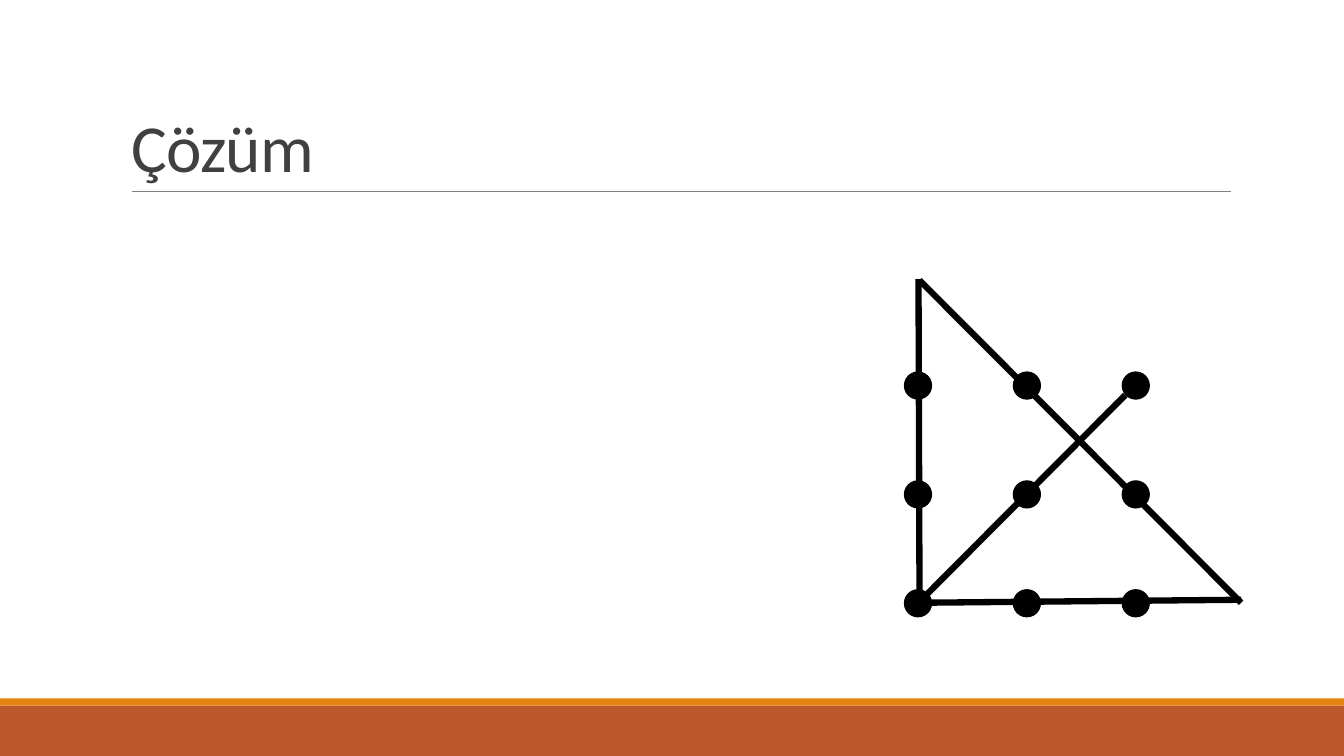
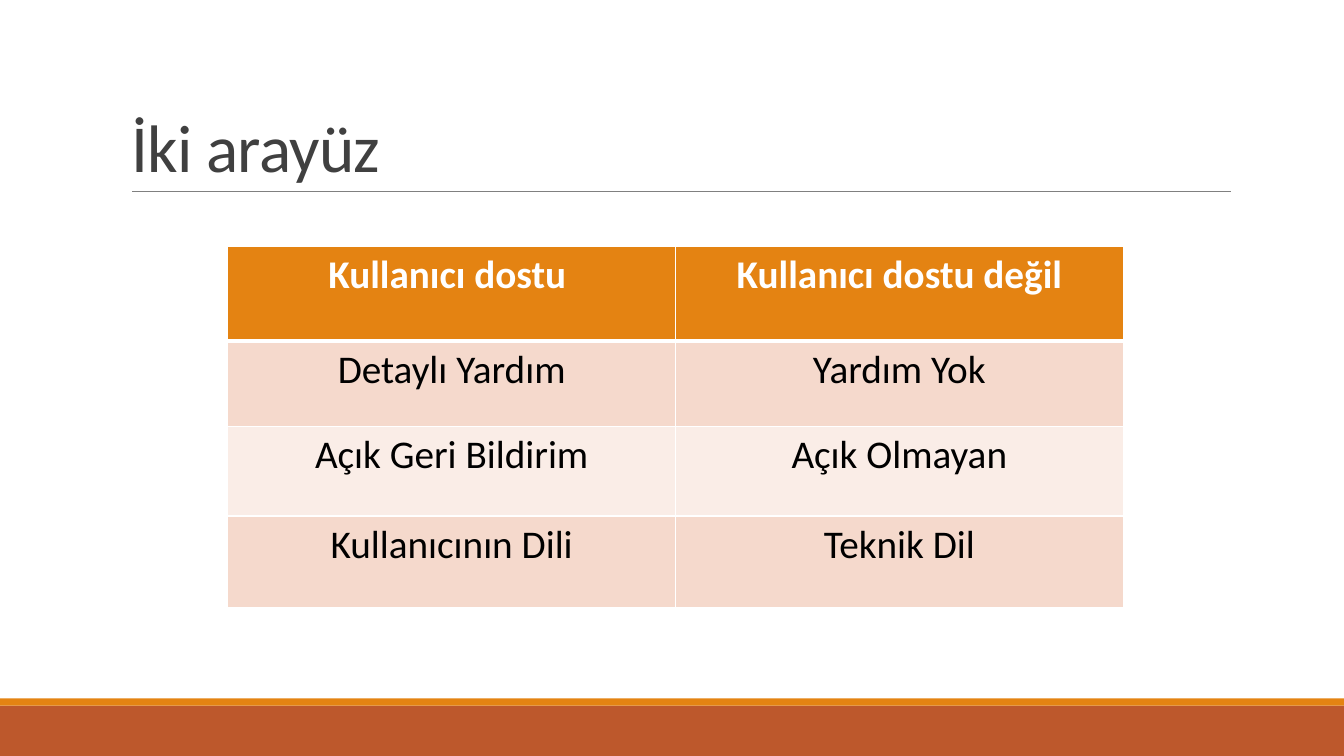
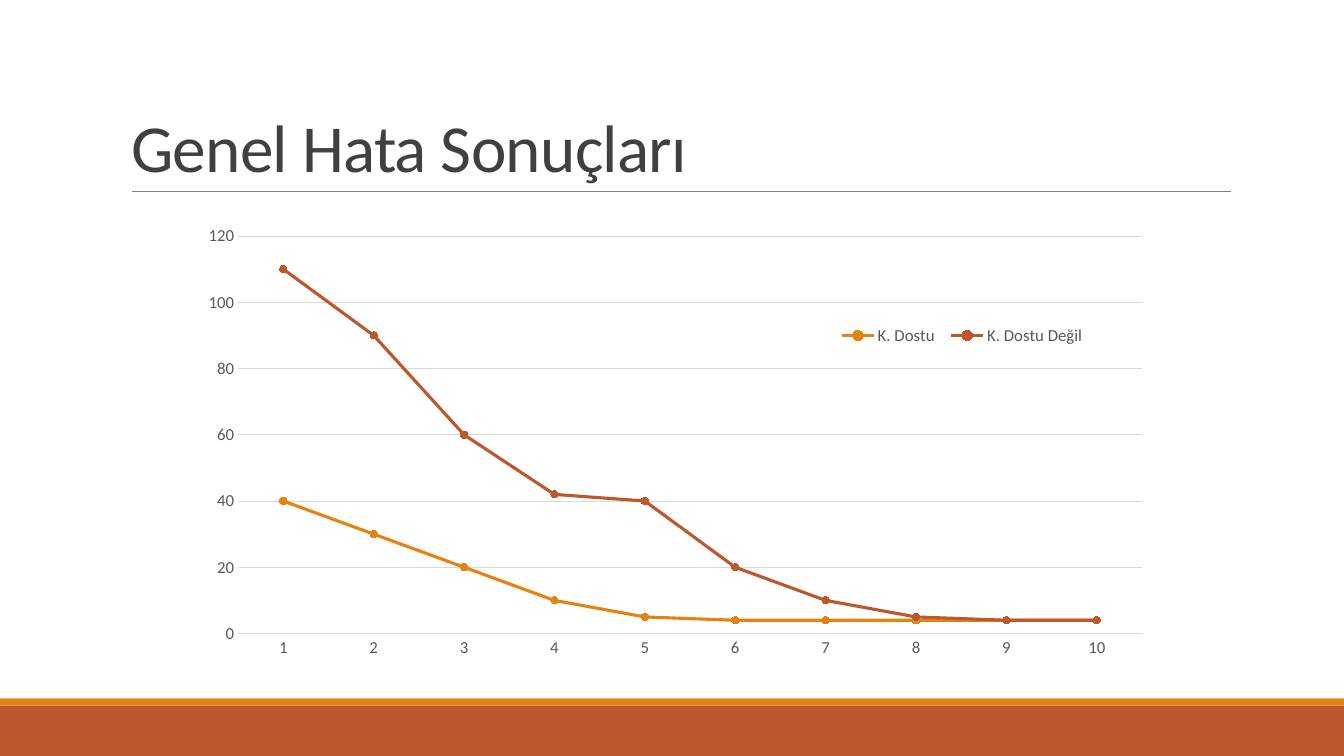
import pptx
import pptx.chart.data
import pptx.dml.color
import pptx.enum.chart
import pptx.enum.shapes
import pptx.enum.text
import pptx.oxml
import pptx.oxml.ns
import pptx.util

Inches = pptx.util.Inches
Pt = pptx.util.Pt
RGBColor = pptx.dml.color.RGBColor
Shape = pptx.enum.shapes.MSO_SHAPE

WHITE = RGBColor(0xFF, 0xFF, 0xFF)
BLACK = RGBColor(0x00, 0x00, 0x00)
ORANGE = RGBColor(0xE4, 0x83, 0x12)
RUST = RGBColor(0xBD, 0x58, 0x2C)
TITLE_GREY = RGBColor(0x40, 0x40, 0x40)
RULE_GREY = RGBColor(0x80, 0x80, 0x80)
LABEL_GREY = RGBColor(0x59, 0x59, 0x59)
GRID_GREY = RGBColor(0xD9, 0xD9, 0xD9)
DARK_ROW = RGBColor(0xF5, 0xD9, 0xCC)
LIGHT_ROW = RGBColor(0xFA, 0xED, 0xE7)


class Deck:
    font = "Calibri"

    def __init__(self):
        self.presentation = pptx.Presentation()
        self.presentation.slide_width = Inches(13.33)
        self.presentation.slide_height = Inches(7.5)
        self.slide = None

    def add_slide(self, title):
        layout = self.presentation.slide_layouts[5]
        self.slide = self.presentation.slides.add_slide(layout)
        shapes = self.slide.shapes
        self.shape(shapes, Shape.RECTANGLE, 0, 7, 13.33, 0.5, RUST)
        self.shape(shapes, Shape.RECTANGLE, 0, 6.93, 13.33, 0.07, ORANGE)
        self.line(shapes, (1.31, 1.9), (12.21, 1.9), RULE_GREY, 0.5)
        self.title(title)

    def title(self, text):
        shape = self.slide.shapes.title
        shape.left, shape.top = Inches(1.2), Inches(0.31)
        shape.width, shape.height = Inches(11), Inches(1.59)
        frame = shape.text_frame
        frame.auto_size = pptx.enum.text.MSO_AUTO_SIZE.NONE
        frame.vertical_anchor = pptx.enum.text.MSO_ANCHOR.BOTTOM
        paragraph = frame.paragraphs[0]
        paragraph.alignment = pptx.enum.text.PP_ALIGN.LEFT
        paragraph.line_spacing = 0.85
        run = self.run(paragraph, text, 48, TITLE_GREY)
        run.font._element.set("spc", "-50")

    def run(self, paragraph, text, size, color, bold=False):
        run = paragraph.add_run()
        run.text = text
        self.style_font(run.font, size, color)
        run.font.bold = bold
        return run

    def style_font(self, font, size, color):
        font.name = self.font
        font.size = Pt(size)
        font.color.rgb = color

    def shape(self, shapes, kind, left, top, width, height, color):
        shape = shapes.add_shape(
            kind, Inches(left), Inches(top), Inches(width), Inches(height))
        shape.shadow.inherit = False
        shape.fill.solid()
        shape.fill.fore_color.rgb = color
        shape.line.fill.background()
        return shape

    def line(self, shapes, start, end, color, width):
        connector = shapes.add_connector(
            pptx.enum.shapes.MSO_CONNECTOR.STRAIGHT,
            *(Inches(value) for value in (*start, *end)))
        connector.line.color.rgb = color
        connector.line.width = Pt(width)
        connector._element.spPr.append(
            pptx.oxml.ns.qn("a:effectLst") and pptx.oxml.parse_xml(
                f"<a:effectLst {pptx.oxml.ns.nsdecls('a')}/>"))

    def dot_puzzle(self, left, top, pitch, diameter, strokes):
        shapes = self.slide.shapes.add_group_shape().shapes
        for row in range(3):
            for column in range(3):
                dot = self.shape(
                    shapes, Shape.OVAL, left + column * pitch,
                    top + row * pitch, diameter, diameter, BLACK)
                dot.line.color.rgb = BLACK
                dot.line.width = Pt(0.75)
        for start, end in strokes:
            self.line(shapes, start, end, BLACK, 4.5)

    def table(self, left, top, width, row_heights, rows):
        table = self.slide.shapes.add_table(
            len(rows), len(rows[0]), Inches(left), Inches(top),
            Inches(width), Inches(sum(row_heights))).table
        for row, height in enumerate(row_heights):
            table.rows[row].height = Inches(height)
            header = row == 0
            fill = ORANGE if header else (LIGHT_ROW, DARK_ROW)[row % 2]
            for column, text in enumerate(rows[row]):
                cell = table.cell(row, column)
                self.borders(cell, L=1, R=1, T=3 if row == 1 else 1,
                             B=3 if header else 1)
                cell.fill.solid()
                cell.fill.fore_color.rgb = fill
                paragraph = cell.text_frame.paragraphs[0]
                paragraph.alignment = pptx.enum.text.PP_ALIGN.CENTER
                self.run(paragraph, text, 28, WHITE if header else BLACK, header)

    def borders(self, cell, **widths):
        properties = cell._tc.get_or_add_tcPr()
        for side, width in widths.items():
            properties.append(pptx.oxml.parse_xml(
                f"<a:ln{side} {pptx.oxml.ns.nsdecls('a')} w='{Pt(width)}'>"
                f"<a:solidFill><a:srgbClr val='{WHITE}'/></a:solidFill>"
                f"</a:ln{side}>"))

    def line_chart(self, left, top, width, height, categories, series):
        data = pptx.chart.data.CategoryChartData()
        data.categories = categories
        for name, values, color in series:
            data.add_series(name, values)
        chart = self.slide.shapes.add_chart(
            pptx.enum.chart.XL_CHART_TYPE.LINE_MARKERS, Inches(left),
            Inches(top), Inches(width), Inches(height), data).chart
        chart.has_title = False
        self.style_font(chart.font, 12, LABEL_GREY)
        chart.plots[0].vary_by_categories = False
        for line, (name, values, color) in zip(chart.plots[0].series, series):
            line.smooth = False
            line.format.line.color.rgb = color
            line.format.line.width = Pt(2.25)
            line.marker.style = pptx.enum.chart.XL_MARKER_STYLE.CIRCLE
            line.marker.size = 5
            line.marker.format.fill.solid()
            line.marker.format.fill.fore_color.rgb = color
            line.marker.format.line.color.rgb = color
        self.axes(chart)
        self.legend(chart)
        self.place(chart, "plotArea", 0, 0.05, 0.04, 0.93, 0.82)
        self.place(chart, "legend", 1, 0.66, 0.21, 0.27, 0.07)

    def axes(self, chart):
        for axis in (chart.category_axis, chart.value_axis):
            axis.major_tick_mark = pptx.enum.chart.XL_TICK_MARK.NONE
            axis.minor_tick_mark = pptx.enum.chart.XL_TICK_MARK.NONE
            self.style_font(axis.tick_labels.font, 12, LABEL_GREY)
        chart.value_axis.minimum_scale = 0
        chart.value_axis.maximum_scale = 120
        chart.value_axis.major_unit = 20
        chart.value_axis.format.line.fill.background()
        chart.value_axis.has_major_gridlines = True
        for part in (chart.category_axis, chart.value_axis.major_gridlines):
            part.format.line.color.rgb = GRID_GREY
            part.format.line.width = Pt(0.75)

    def legend(self, chart):
        chart.has_legend = True
        chart.legend.position = pptx.enum.chart.XL_LEGEND_POSITION.BOTTOM
        chart.legend.include_in_layout = False
        self.style_font(chart.legend.font, 12, LABEL_GREY)

    def place(self, chart, part, index, left, top, width, height):
        element = chart.element.xpath(f"c:chart/c:{part}")[0]
        for layout in element.xpath("c:layout"):
            element.remove(layout)
        target = "<c:layoutTarget val='inner'/>" if part == "plotArea" else ""
        element.insert(index, pptx.oxml.parse_xml(
            f"<c:layout {pptx.oxml.ns.nsdecls('c')}><c:manualLayout>{target}"
            f"<c:xMode val='edge'/><c:yMode val='edge'/>"
            f"<c:x val='{left}'/><c:y val='{top}'/>"
            f"<c:w val='{width}'/><c:h val='{height}'/>"
            f"</c:manualLayout></c:layout>"))


def main():
    deck = Deck()

    deck.add_slide("Çözüm")
    deck.dot_puzzle(8.97, 3.69, 1.08, 0.27, [
        ((9.11, 5.98), (11.16, 3.92)),
        ((9.12, 5.89), (9.11, 2.77)),
        ((9.12, 2.78), (12.31, 5.98)),
        ((9.1, 5.98), (12.31, 5.95)),
    ])

    deck.add_slide("İki arayüz")
    deck.table(2.26, 2.44, 8.88, [0.94, 0.85, 0.89, 0.91], [
        ("Kullanıcı dostu ", "Kullanıcı dostu değil"),
        ("Detaylı Yardım", "Yardım Yok"),
        ("Açık Geri Bildirim", "Açık Olmayan"),
        ("Kullanıcının Dili", "Teknik Dil"),
    ])

    deck.add_slide("Genel Hata Sonuçları")
    deck.line_chart(
        1.88, 2.15, 9.64, 4.81, [str(number) for number in range(1, 11)], [
            ("K. Dostu", (40, 30, 20, 10, 5, 4, 4, 4, 4, 4), ORANGE),
            ("K. Dostu Değil", (110, 90, 60, 42, 40, 20, 10, 5, 4, 4), RUST),
        ])

    deck.presentation.save("out.pptx")


if __name__ == "__main__":
    main()
